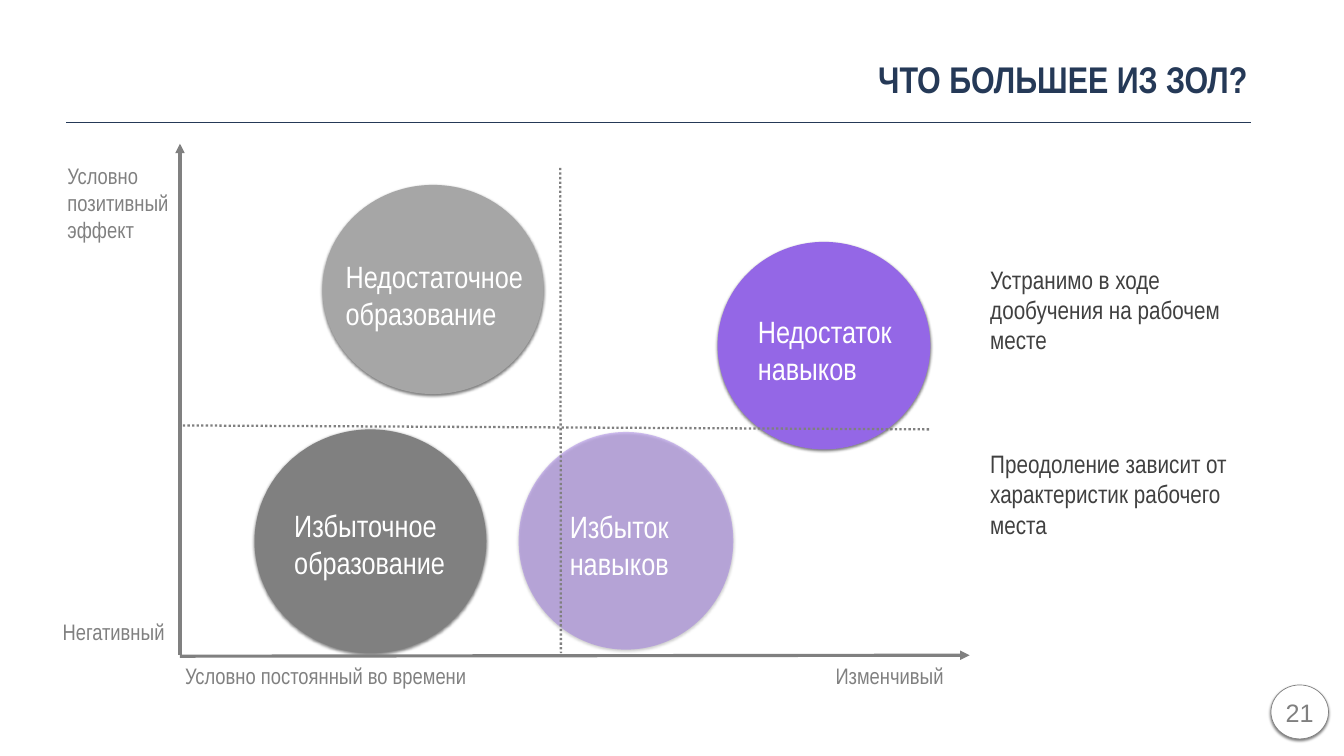
"""Build the slide that places four kinds of skill mismatch on two axes."""
from dataclasses import dataclass
from typing import Optional

from lxml import etree
from pptx import Presentation
from pptx import util as u
from pptx.dml.color import RGBColor
from pptx.enum import dml, shapes, text
from pptx.oxml.ns import qn


@dataclass(frozen=True)
class Theme:
    navy: str = "253957"
    violet: str = "9467E6"
    light_grey: str = "A6A6A6"
    grey: str = "808080"
    dark: str = "404040"
    white: str = "FFFFFF"
    narrow: str = "Arial Narrow"
    plain: str = "Arial"
    title: int = 53
    caption: int = 44
    remark: int = 36
    label: int = 32


@dataclass(frozen=True)
class Box:
    x: float
    y: float
    w: float
    h: float

    def lengths(self) -> list:
        return [u.Cm(v) for v in (self.x, self.y, self.w, self.h)]


@dataclass(frozen=True)
class Style:
    size: int
    color: str
    font: str = Theme.narrow
    bold: bool = False
    align: text.PP_ALIGN = text.PP_ALIGN.LEFT
    after: int = 0


@dataclass(frozen=True)
class Bubble:
    box: Box
    fill: str
    opacity: int = 100
    outline: Optional[str] = None


@dataclass(frozen=True)
class Note:
    words: str
    box: Box
    style: Style
    frame: dict


@dataclass(frozen=True)
class Rule:
    start: tuple
    end: tuple
    color: str
    width: float
    dash: Optional[dml.MSO_LINE] = None
    arrow: bool = False


T = Theme()
WRAP = {"word_wrap": True, "auto_size": text.MSO_AUTO_SIZE.SHAPE_TO_FIT_TEXT}
NO_WRAP = {**WRAP, "word_wrap": False}
REMARK_FRAME = {**WRAP, "margin_left": u.Cm(0.41)}
INSETS = {f"margin_{side}": u.Cm(0.2) for side in ("left", "top", "right", "bottom")}
MIDDLE = {**INSETS, "word_wrap": True, "auto_size": text.MSO_AUTO_SIZE.NONE,
          "vertical_anchor": text.MSO_ANCHOR.MIDDLE}

TITLE = Style(T.title, T.navy, bold=True, align=text.PP_ALIGN.RIGHT)
CAPTION = Style(T.caption, T.white)
LABEL = Style(T.label, T.grey)
AXIS_LABEL = Style(T.label, T.grey, align=text.PP_ALIGN.CENTER)
REMARK = Style(T.remark, T.dark, after=12)
NUMBER = Style(T.remark, T.grey, T.plain, align=text.PP_ALIGN.CENTER)

BUBBLES = [
    Bubble(Box(26.14, 21.77, 10.82, 10.97), T.violet, opacity=40),
    Bubble(Box(36.17, 12.19, 10.72, 10.46), T.violet),
    Bubble(Box(16.26, 9.32, 11.13, 10.54), T.light_grey),
    Bubble(Box(12.83, 21.64, 11.68, 11.28), T.grey),
]
BADGE = Bubble(Box(64.06, 34.52, 2.9, 2.72), T.white, outline=T.grey)
NOTES = [
    Note("Условно постоянный во времени", Box(8.97, 33.22, 14.91, 1.63), AXIS_LABEL, NO_WRAP),
    Note("Негативный", Box(2.72, 31.04, 6.02, 1.63), AXIS_LABEL, NO_WRAP),
    Note("Изменчивый", Box(41.83, 33.22, 6.02, 1.63), AXIS_LABEL, NO_WRAP),
    Note("Условно позитивный\nэффект", Box(3.15, 8.05, 7.87, 4.37), LABEL, WRAP),
    Note("Избыточное образование", Box(14.58, 25.4, 11.94, 4.01), CAPTION, WRAP),
    Note("Недостаток навыков", Box(37.95, 15.62, 8.92, 4.01), CAPTION, WRAP),
    Note("Недостаточное образование", Box(17.17, 12.85, 14.43, 4.01), CAPTION, WRAP),
    Note("Избыток навыков", Box(28.47, 25.45, 8.92, 4.01), CAPTION, WRAP),
    Note("Устранимо в ходе дообучения на рабочем месте",
         Box(49.5, 13.18, 14.58, 4.88), REMARK, REMARK_FRAME),
    Note("Преодоление зависит от характеристик рабочего места",
         Box(49.5, 22.48, 14.58, 4.88), REMARK, REMARK_FRAME),
]
AXES = [
    Rule((3.33, 6.15), (63.07, 6.15), T.navy, 1),
    Rule((9.07, 33.07), (48.87, 33.02), T.grey, 4.5, arrow=True),
    Rule((9.07, 33.02), (9.07, 7.24), T.grey, 4.5, arrow=True),
]
DIVIDERS = [
    Rule((9.22, 21.44), (46.86, 21.64), T.grey, 3.25, dml.MSO_LINE.ROUND_DOT),
    Rule((28.24, 8.46), (28.27, 32.92), T.grey, 3.25, dml.MSO_LINE.ROUND_DOT),
]


def rgb(value: str) -> RGBColor:
    return RGBColor.from_string(value)


def write(sp, words: str, style: Style, frame: dict) -> None:
    tf = sp.text_frame
    tf.text = words
    for name, value in frame.items():
        setattr(tf, name, value)
    for p in tf.paragraphs:
        p.alignment = style.align
        p.space_after = u.Pt(style.after)
        for r in p.runs:
            formats = {"name": style.font, "size": u.Pt(style.size), "bold": style.bold}
            for name, value in formats.items():
                setattr(r.font, name, value)
            r.font.color.rgb = rgb(style.color)


def add_shadow(sp) -> None:
    sp.shadow.inherit = False
    effects = sp._element.spPr.find(qn("a:effectLst"))
    shadow = etree.SubElement(effects, qn("a:outerShdw"), blurRad=str(u.Pt(4)),
                              dist=str(u.Pt(2)), dir="5400000", rotWithShape="0")
    color = etree.SubElement(shadow, qn("a:srgbClr"), val="000000")
    etree.SubElement(color, qn("a:alpha"), val="50000")


def draw_bubble(s, bubble: Bubble):
    sp = s.shapes.add_shape(shapes.MSO_SHAPE.OVAL, *bubble.box.lengths())
    sp.fill.solid()
    sp.fill.fore_color.rgb = rgb(bubble.fill)
    if bubble.opacity < 100:
        color = sp._element.spPr.find(qn("a:solidFill"))[0]
        etree.SubElement(color, qn("a:alpha"), val=str(bubble.opacity * 1000))
    if bubble.outline:
        sp.line.color.rgb = rgb(bubble.outline)
        sp.line.width = u.Pt(1)
    else:
        sp.line.fill.background()
    add_shadow(sp)
    return sp


def draw_rule(s, rule: Rule) -> None:
    ends = [u.Cm(v) for v in rule.start + rule.end]
    sp = s.shapes.add_connector(shapes.MSO_CONNECTOR.STRAIGHT, *ends)
    sp.line.color.rgb = rgb(rule.color)
    sp.line.width = u.Pt(rule.width)
    if rule.dash:
        sp.line.dash_style = rule.dash
    if rule.arrow:
        etree.SubElement(sp.line._get_or_add_ln(), qn("a:tailEnd"), type="triangle")
    etree.SubElement(sp._element.spPr, qn("a:effectLst"))


def draw_note(s, note: Note) -> None:
    write(s.shapes.add_textbox(*note.box.lengths()), note.words, note.style, note.frame)


def main() -> None:
    prs = Presentation()
    prs.slide_width, prs.slide_height = u.Cm(67.74), u.Cm(38.1)
    s = prs.slides.add_slide(prs.slide_layouts[5])
    title = s.shapes.title
    title.left, title.top, title.width, title.height = Box(3.4, 2.34, 59.69, 3.2).lengths()
    write(title, "ЧТО БОЛЬШЕЕ ИЗ ЗОЛ?", TITLE, MIDDLE)
    for draw, items in ((draw_bubble, BUBBLES), (draw_rule, AXES),
                        (draw_note, NOTES), (draw_rule, DIVIDERS)):
        for item in items:
            draw(s, item)
    write(draw_bubble(s, BADGE), "21", NUMBER, MIDDLE)
    prs.save("out.pptx")


if __name__ == "__main__":
    main()
